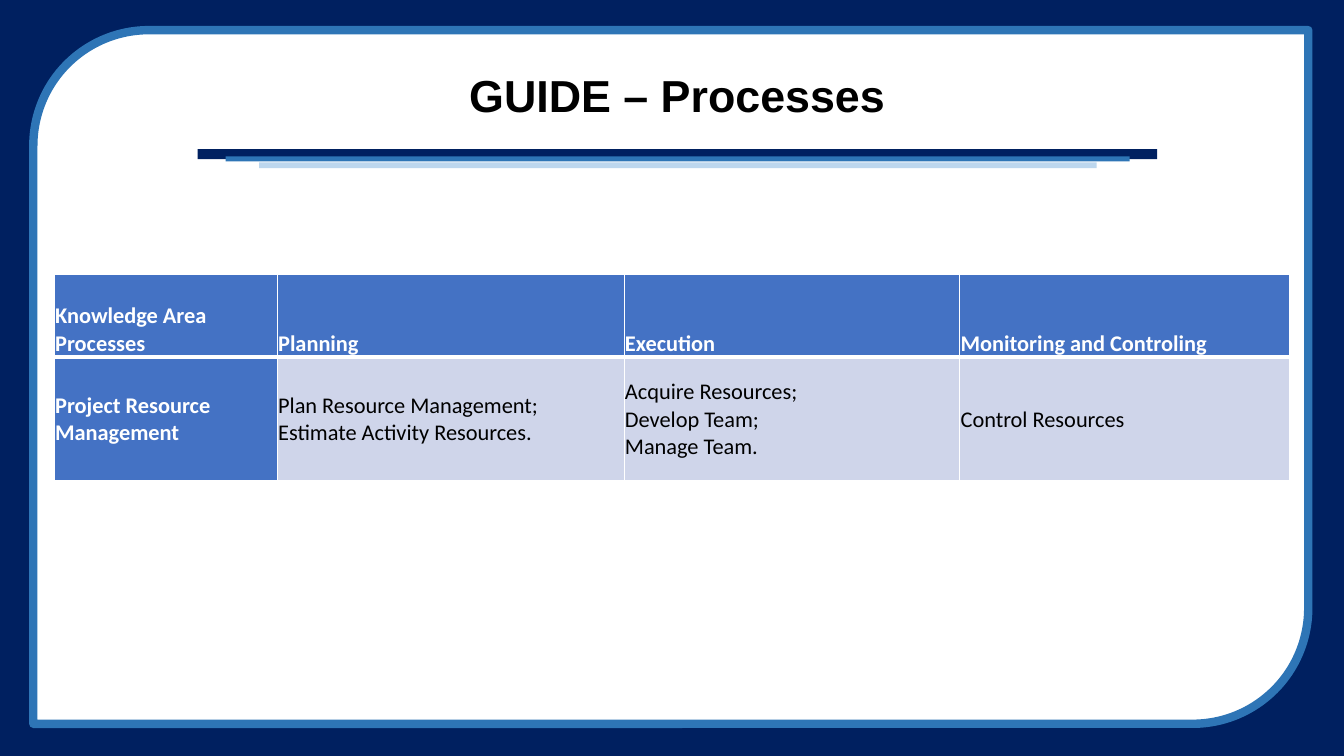
from copy import deepcopy

from lxml.etree import SubElement
from pptx import Presentation
from pptx.dml.color import RGBColor
from pptx.enum.shapes import MSO_SHAPE as Shape
from pptx.enum.text import MSO_ANCHOR as Anchor, PP_ALIGN as Align
from pptx.oxml.ns import qn
from pptx.util import Cm, Pt

COLORS = {
    "navy": "002060",
    "blue": "2E75B6",
    "pale": "BDD7EE",
    "header": "4472C4",
    "body": "CFD5EA",
    "white": "FFFFFF",
    "black": "000000",
}


def rgb(name):
    return RGBColor.from_string(COLORS[name])


def write(frame, text, font="Calibri", size=16, color="black", bold=False,
          align=Align.LEFT, spacing=None):
    """Fill a text frame with one paragraph; newlines become line breaks."""
    paragraph = frame.paragraphs[0]
    paragraph.text = text
    paragraph.alignment = align
    paragraph.line_spacing = spacing
    for run in paragraph.runs:
        run.font.name = font
        run.font.size = Pt(size)
        run.font.bold = bold
        run.font.color.rgb = rgb(color)
    for line_break in paragraph._p.findall(qn("a:br")):
        line_break.append(deepcopy(paragraph.runs[0]._r.rPr))


class SlideBuilder:
    def __init__(self, slide):
        self.shapes = slide.shapes

    def panel(self, box, fill, kind=Shape.RECTANGLE, line=None, width=0):
        panel = self.shapes.add_shape(kind, *map(Cm, box))
        panel.shadow.inherit = False
        panel.fill.solid()
        panel.fill.fore_color.rgb = rgb(fill)
        if line:
            panel.line.color.rgb = rgb(line)
            panel.line.width = Pt(width)
        else:
            panel.line.fill.background()

    def title(self, box, text):
        frame = self.shapes.add_textbox(*map(Cm, box)).text_frame
        frame.word_wrap = True
        frame.vertical_anchor = Anchor.MIDDLE
        write(frame, text, font="Arial", size=32, bold=True,
              align=Align.CENTER, spacing=0.9)

    def borders(self, cell, widths):
        properties = cell._tc.get_or_add_tcPr()
        for side, width in widths.items():
            edge = SubElement(properties, qn(f"a:ln{side}"), w=str(Pt(width)))
            fill = SubElement(edge, qn("a:solidFill"))
            SubElement(fill, qn("a:srgbClr"), val=COLORS["white"])

    def table(self, left, top, columns, heights, rows):
        table = self.shapes.add_table(
            len(rows), len(columns), Cm(left), Cm(top),
            Cm(sum(columns)), Cm(sum(heights))).table
        table.horz_banding = False
        for column, width in zip(table.columns, columns):
            column.width = Cm(width)
        for row, height in zip(table.rows, heights):
            row.height = Cm(height)
        for r, texts in enumerate(rows):
            for c, text in enumerate(texts):
                cell = table.cell(r, c)
                heading = r == 0 or c == 0
                cell.margin_left = cell.margin_right = cell.margin_top = Cm(0.02)
                cell.margin_bottom = 0
                cell.vertical_anchor = Anchor.MIDDLE if r else Anchor.BOTTOM
                # The rule under the header row is thicker than the rest
                self.borders(cell, {"L": 1, "R": 1, "T": 3 if r == 1 else 1,
                                    "B": 3 if r == 0 else 1})
                cell.fill.solid()
                cell.fill.fore_color.rgb = rgb("header" if heading else "body")
                write(cell.text_frame, text, bold=heading,
                      color="white" if heading else "black")


def main():
    deck = Presentation()
    deck.slide_width, deck.slide_height = Cm(33.87), Cm(19.05)
    builder = SlideBuilder(deck.slides.add_slide(deck.slide_layouts[6]))

    # Background and frame
    builder.panel((0, 0, 33.87, 19.05), "navy")
    builder.panel((0.84, 0.76, 32.13, 17.48), "white",
                  Shape.ROUND_2_DIAG_RECTANGLE, line="blue", width=6)

    # Title and the stepped bars below it
    for box, color in [((4.98, 3.76, 24.18, 0.25), "navy"),
                       ((5.69, 3.94, 22.78, 0.13), "blue"),
                       ((6.53, 4.09, 21.11, 0.15), "pale")]:
        builder.panel(box, color)
    builder.title((4.98, 1.24, 24.18, 2.46), "GUIDE – Processes")

    # Process table
    builder.table(1.37, 6.92, [5.62, 8.74, 8.46, 8.31], [2.08, 3.12], [
        ["Knowledge Area Processes", "Planning", "Execution",
         "Monitoring and Controling"],
        ["Project Resource Management",
         "Plan Resource Management;\nEstimate Activity Resources.",
         "Acquire Resources;\nDevelop Team;\nManage Team.",
         "Control Resources"],
    ])

    deck.save("out.pptx")


if __name__ == "__main__":
    main()
